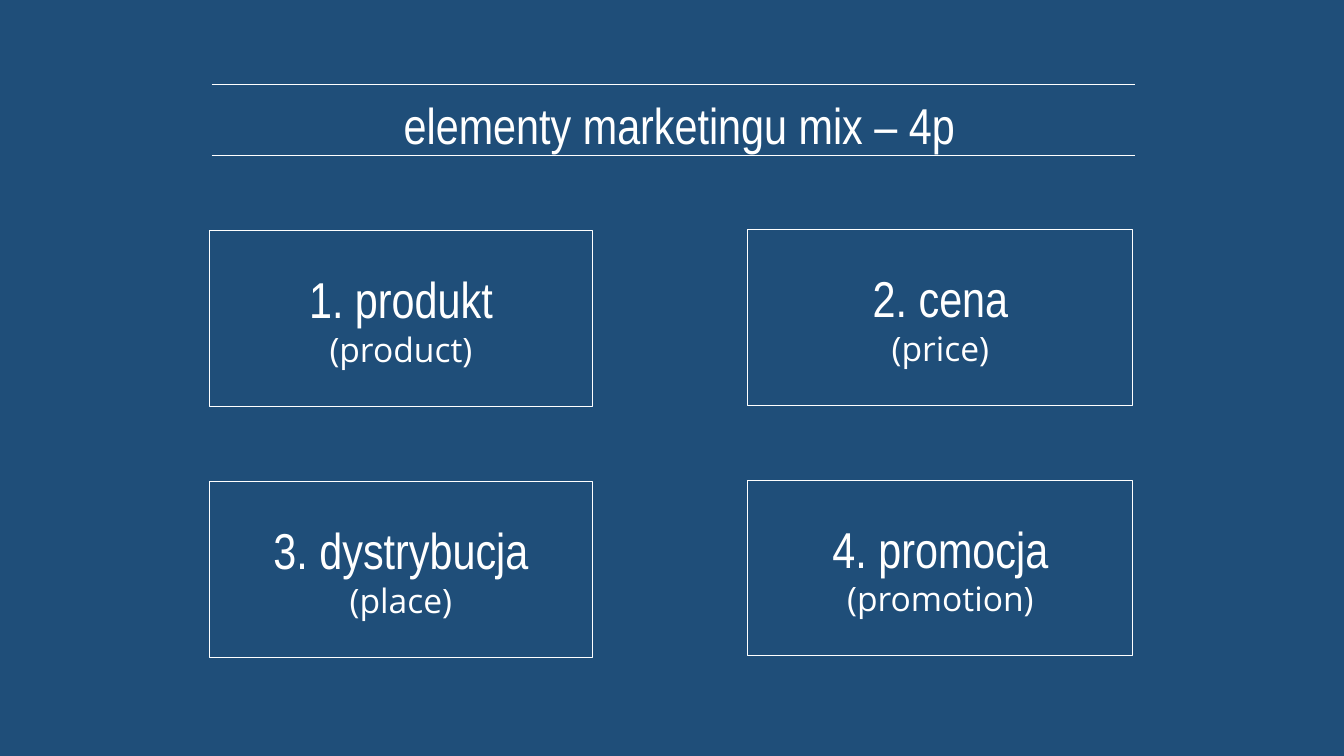
from pptx import Presentation
from pptx import util as u
from pptx.dml.color import RGBColor
from pptx.enum import shapes, text
from pptx.oxml.ns import qn
from lxml import etree

HUES = {"back": "1F4E79", "white": "FFFFFF"}


def write(para, words, size=36, font="Arial Narrow", hue="white"):
    para.alignment = text.PP_ALIGN.CENTER
    run = para.add_run()
    run.text = words
    run.font.size = u.Pt(size)
    run.font.name = font
    run.font.color.rgb = RGBColor.from_string(HUES[hue])


deck = Presentation()
deck.slide_width, deck.slide_height = u.Cm(33.87), u.Cm(19.05)
slide = deck.slides.add_slide(deck.slide_layouts[5])
slide.background.fill.solid()
slide.background.fill.fore_color.rgb = RGBColor.from_string(HUES["back"])
white = RGBColor.from_string(HUES["white"])

# Title
title = slide.shapes.title
title.left, title.top = u.Cm(5.69), u.Cm(2.24)
title.width, title.height = u.Cm(22.86), u.Cm(1.8)
frame = title.text_frame
frame.auto_size = text.MSO_AUTO_SIZE.SHAPE_TO_FIT_TEXT
frame.vertical_anchor = text.MSO_ANCHOR.TOP
write(frame.paragraphs[0], "elementy marketingu mix – 4p")

# Rules above and below the title
for y in (2.13, 3.91):
    rule = slide.shapes.add_connector(
        shapes.MSO_CONNECTOR.STRAIGHT, u.Cm(5.33), u.Cm(y), u.Cm(28.6), u.Cm(y))
    rule.line.color.rgb = white
    rule.line.width = u.Pt(0.5)
    etree.SubElement(rule._element.spPr, qn("a:effectLst"))

# Four boxes, two to a row
parts = [("produkt", "product"), ("cena", "price"),
         ("dystrybucja", "place"), ("promocja", "promotion")]
cols = [(5.28, 5.82, 9.65), (18.85, 5.79, 9.7)]  # left, first top, width
step = 6.32

for i, (name, term) in enumerate(parts):
    row, col = divmod(i, 2)
    left, top, width = cols[col]
    box = slide.shapes.add_shape(
        shapes.MSO_SHAPE.RECTANGLE,
        u.Cm(left), u.Cm(top + row * step), u.Cm(width), u.Cm(4.42))
    box.shadow.inherit = False
    box.fill.background()
    box.line.color.rgb = white
    box.line.width = u.Pt(0.75)
    frame = box.text_frame
    frame.word_wrap = True
    frame.vertical_anchor = text.MSO_ANCHOR.MIDDLE
    write(frame.paragraphs[0], f"{i + 1}. {name}")
    write(frame.add_paragraph(), f"({term})", size=24, font="Open Sans")

deck.save("out.pptx")
